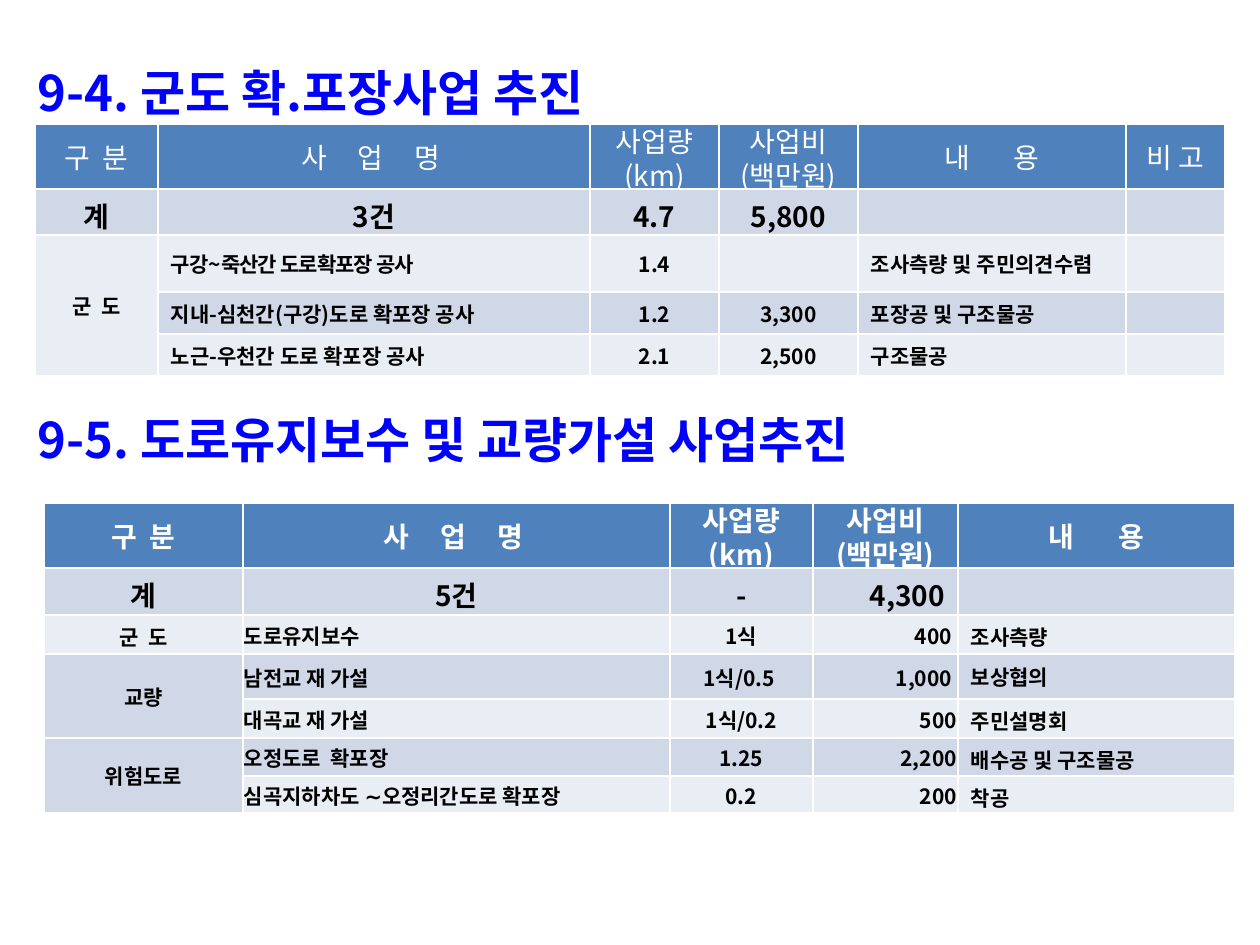
from pptx import Presentation
from pptx.dml.color import RGBColor
from pptx.enum.text import MSO_ANCHOR, PP_ALIGN
from pptx.oxml.ns import qn
from pptx.util import Emu, Pt

PX = 914400 // 126
FONT = "Noto Sans CJK KR"
MIDDLE = MSO_ANCHOR.MIDDLE
ALIGN = {"l": PP_ALIGN.LEFT, "c": PP_ALIGN.CENTER, "r": PP_ALIGN.RIGHT}
HEADER_FILL, BAND_FILLS = "4F81BD", ("D0D8E8", "E9EDF4")
WIDE_MARGINS, TIGHT_MARGINS = (13, 6, 13, 6), (1, 1, 1, 0)
CONDENSED = "구강~죽산간 도로확포장 공사"

TITLES = [
    ("9-4. 군도 확.포장사업 추진", 45, 1.2),
    ("9-5. 도로유지보수 및 교량가설 사업추진", 403, 1.0),
]
HEADER = ("구  분", "사     업     명 ", "사업량\n(km)", "사업비\n(백만원)", "내       용")
TABLES = [
    {
        "at": (35, 124),
        "columns": (123, 432, 129, 139, 268, 99),
        "heights": (65, 46, 57, 42, 42),
        "align": "clccll",
        "header_bold": False,
        "tight_columns": (),
        "merges": [(2, 4)],
        "rows": [
            (*HEADER, "비 고"),
            ("계", "3건", "4.7", "5,800", "", ""),
            ("군  도", CONDENSED, "1.4", "", "조사측량 및 주민의견수렴", ""),
            ("", "지내-심천간(구강)도로 확포장 공사", "1.2", "3,300", "포장공 및 구조물공", ""),
            ("", "노근-우천간 도로 확포장 공사", "2.1", "2,500", "구조물공", ""),
        ],
    },
    {
        "at": (44, 503),
        "columns": (199, 427, 143, 145, 277),
        "heights": (65, 47, 39, 45, 39, 38, 37),
        "align": "clcrl",
        "header_bold": True,
        "tight_columns": (1, 2, 3),
        "merges": [(3, 4), (5, 6)],
        "rows": [
            HEADER,
            ("계", "5건", "-", "4,300", ""),
            ("군  도", "도로유지보수", " 1식 ", "400 ", "조사측량"),
            ("교량", "남전교 재 가설", "1식/0.5 ", "1,000 ", "보상협의"),
            ("", "대곡교 재 가설", "1식/0.2", "500", "주민설명회"),
            ("위험도로", "오정도로  확포장", "1.25", "2,200", "배수공 및 구조물공"),
            ("", "심곡지하차도 ∼오정리간도로 확포장", "0.2", "200", "착공"),
        ],
    },
]


def px(length):
    """Turn px into EMU."""
    return Emu(length * PX)


def color(value):
    """Turn a hex string into a colour."""
    return RGBColor.from_string(value)


def format_runs(paragraph, size, hex_color, bold):
    """Format all runs and the empty end of a paragraph."""
    paragraph._p.get_or_add_endParaRPr().set("sz", str(size * 100))
    for run in paragraph.runs:
        run.font.size = Pt(size)
        run.font.bold = bold
        run.font.name = FONT
        run.font.color.rgb = color(hex_color)
        properties = run._r.get_or_add_rPr()
        properties.makeelement(qn("a:ea"), {"typeface": FONT})
        properties.find(qn("a:latin")).addnext(
            properties.makeelement(qn("a:ea"), {"typeface": FONT}))
        if run.text == CONDENSED:
            properties.set("spc", "-50")


def add_title(slide, text, top, line_spacing):
    """Add a section title."""
    frame = slide.shapes.add_textbox(px(25), px(top), px(1230), px(76)).text_frame
    frame.word_wrap = True
    frame.text = text
    paragraph = frame.paragraphs[0]
    paragraph.line_spacing = line_spacing
    format_runs(paragraph, 28, "0000FF", True)


def fill_cell(cell, text, row, column, table_data):
    """Write and style one cell according to its row and column."""
    is_header, is_total = row == 0, row == 1
    size = 16 if row < 2 else 12
    is_tight = row > 1 and column in table_data["tight_columns"]
    margins = TIGHT_MARGINS if is_tight else WIDE_MARGINS
    cell.margin_left, cell.margin_top, cell.margin_right, cell.margin_bottom = map(px, margins)
    cell.vertical_anchor = MIDDLE
    cell.fill.solid()
    cell.fill.fore_color.rgb = color(HEADER_FILL if is_header else BAND_FILLS[(row - 1) % 2])
    cell.text_frame.text = text
    column_align = table_data["align"][column]
    centered = is_header or (is_total and column_align == "l")
    for paragraph in cell.text_frame.paragraphs:
        paragraph.alignment = ALIGN["c" if centered else column_align]
        if not is_tight:
            paragraph.space_before = Pt(size * 0.2)
        if "\n" in text:
            paragraph.line_spacing = 0.7
        format_runs(paragraph, size, "FFFFFF" if is_header else "000000",
                    table_data["header_bold"] if is_header else True)


def add_project_table(slide, data):
    """Add one project table."""
    rows, columns, heights = data["rows"], data["columns"], data["heights"]
    table = slide.shapes.add_table(
        len(rows), len(columns), *map(px, data["at"]), px(sum(columns)), px(sum(heights))).table
    for column, width in zip(table.columns, columns):
        column.width = px(width)
    for row, height in zip(table.rows, heights):
        row.height = px(height)
    for row, texts in enumerate(rows):
        for column, text in enumerate(texts):
            fill_cell(table.cell(row, column), text, row, column, data)
    for first, last in data["merges"]:
        table.cell(first, 0).merge(table.cell(last, 0))


def main():
    """Build the slide with both project sections."""
    presentation = Presentation()
    presentation.slide_width, presentation.slide_height = px(1260), px(945)
    slide = presentation.slides.add_slide(presentation.slide_layouts[6])
    for title in TITLES:
        add_title(slide, *title)
    for data in TABLES:
        add_project_table(slide, data)
    presentation.save("out.pptx")


if __name__ == "__main__":
    main()
